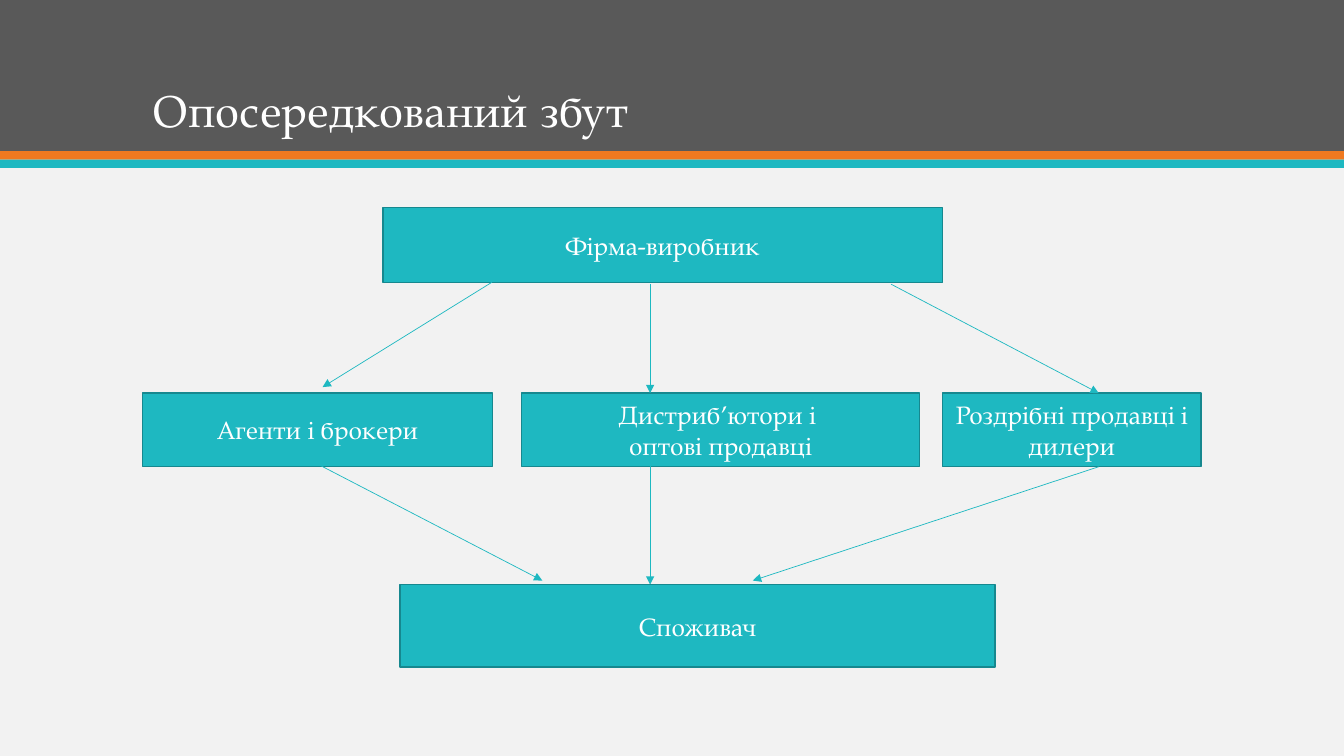
from lxml.etree import SubElement
from pptx import Presentation
from pptx.dml.color import RGBColor
from pptx.enum.shapes import MSO_CONNECTOR, MSO_SHAPE
from pptx.enum.text import MSO_ANCHOR, PP_ALIGN
from pptx.oxml.ns import qn
from pptx.util import Pt


def color(value):
    return RGBColor.from_string(value)


def assign(target, values):
    for name, value in values.items():
        setattr(target, name, value)


class SlideBuilder:
    teal = "1EB8C1"
    border = "16888F"
    orange = "EF7920"
    dark = "595959"
    light = "F2F2F2"
    white = "FFFFFF"
    font = "TeX Gyre Pagella"

    def __init__(self, page):
        self.page = page
        fill = page.background.fill
        fill.solid()
        fill.fore_color.rgb = color(self.light)

    def add_lines(self, shape, lines, size, anchor, paragraph_format):
        frame = shape.text_frame
        assign(frame, {"word_wrap": True, "vertical_anchor": anchor})
        for index, line in enumerate(lines):
            para = frame.paragraphs[0] if index == 0 else frame.add_paragraph()
            assign(para, paragraph_format)
            span = para.add_run()
            span.text = line
            assign(span.font, {"name": self.font, "size": Pt(size)})
            span.font.color.rgb = color(self.white)

    def rectangle(self, left, top, width, height, fill):
        shape = self.page.shapes.add_shape(
            MSO_SHAPE.RECTANGLE, Pt(left), Pt(top), Pt(width), Pt(height))
        shape.shadow.inherit = False
        shape.fill.solid()
        shape.fill.fore_color.rgb = color(fill)
        shape.line.fill.background()
        return shape

    def title(self, left, top, width, height, text):
        box = self.page.shapes.add_textbox(Pt(left), Pt(top), Pt(width), Pt(height))
        self.add_lines(box, [text], 32, MSO_ANCHOR.BOTTOM, {"line_spacing": 0.9})

    def box(self, left, top, width, height, *lines):
        shape = self.rectangle(left, top, width, height, self.teal)
        shape.line.color.rgb = color(self.border)
        shape.line.width = Pt(1)
        self.add_lines(shape, lines, 18, MSO_ANCHOR.MIDDLE, {"alignment": PP_ALIGN.CENTER})

    def arrow(self, *ends):
        connector = self.page.shapes.add_connector(
            MSO_CONNECTOR.STRAIGHT, *[Pt(value) for value in ends])
        connector.line.color.rgb = color(self.teal)
        connector.line.width = Pt(0.5)
        properties = connector.element.spPr
        SubElement(properties.find(qn("a:ln")), qn("a:tailEnd"), type="triangle")
        SubElement(properties, qn("a:effectLst"))


def main():
    deck = Presentation()
    assign(deck, {"slide_width": Pt(960), "slide_height": Pt(540)})
    slide = SlideBuilder(deck.slides.add_slide(deck.slide_layouts[6]))

    for top, height, fill in (
            (0, 108, slide.dark), (108, 6, slide.orange), (114, 6, slide.teal)):
        slide.rectangle(0, top, 960, height, fill)
    slide.title(102, 20, 756, 81.5, "Опосередкований збут")

    slide.box(273.6, 148.3, 399.6, 53.7, "Фірма-виробник")
    for left, width, lines in (
            (101.8, 250, ["Агенти і брокери"]),
            (372.7, 284, ["Дистриб’ютори і ", "оптові продавці"]),
            (673.2, 184.8, ["Роздрібні продавці і дилери"])):
        slide.box(left, 280.8, width, 52.6, *lines)

    for ends in (
            (464.4, 203, 464.4, 280.8),
            (351.4, 201.6, 230.4, 276.5),
            (636.5, 203, 784.8, 280.8),
            (216.7, 326.2, 387.4, 414.7),
            (464.4, 332, 464.4, 417.6),
            (784.8, 333.4, 537.8, 414.7)):
        slide.arrow(*ends)
    slide.box(285.8, 417.6, 425, 59, "Споживач")

    deck.save("out.pptx")


if __name__ == "__main__":
    main()
